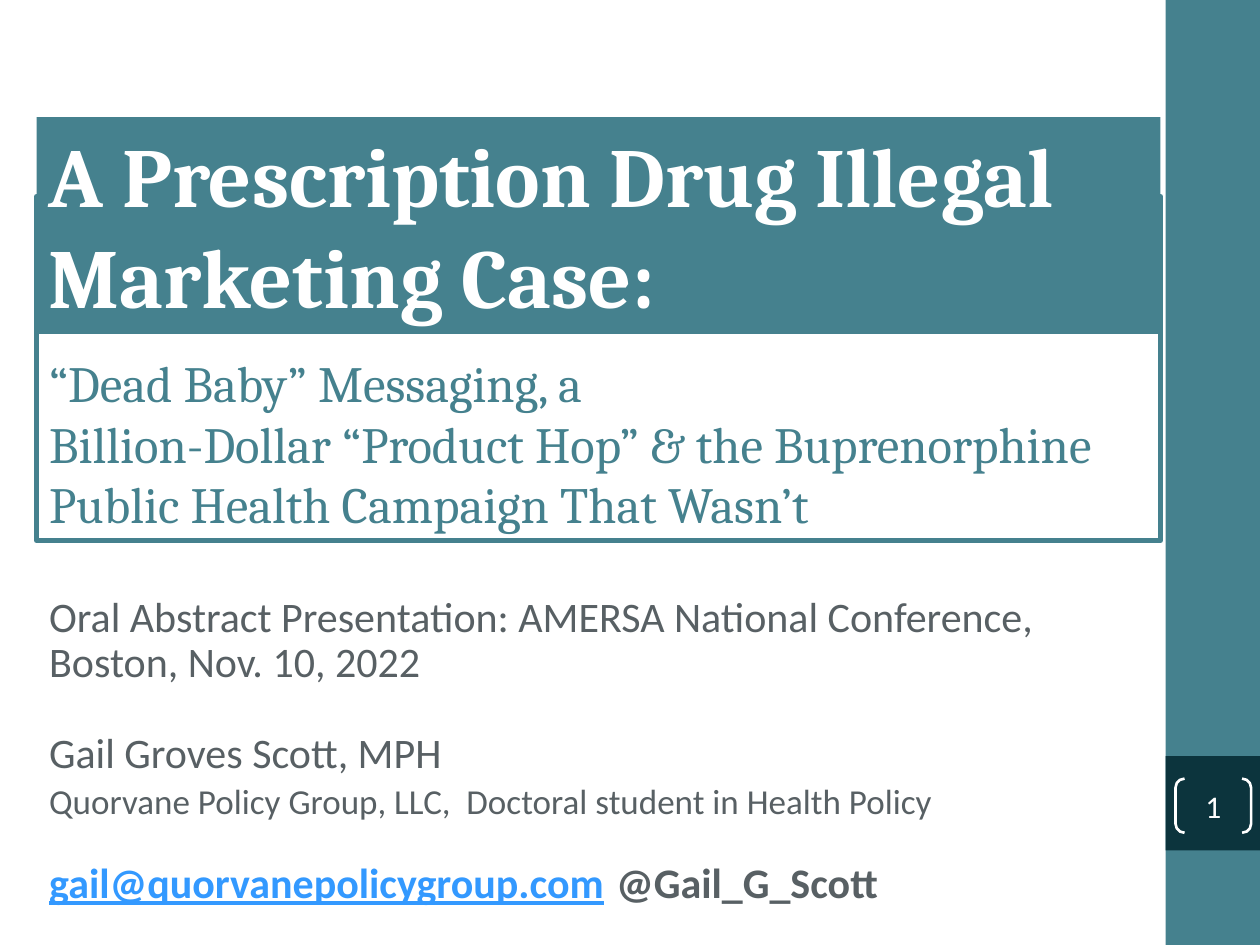
from dataclasses import dataclass

import pptx
import pptx.dml.color
import pptx.enum.shapes
import pptx.enum.text
import pptx.util
from lxml import etree
from pptx.util import Inches

SHAPE = pptx.enum.shapes.MSO_SHAPE
ALIGN = pptx.enum.text.PP_ALIGN
ANCHOR = pptx.enum.text.MSO_ANCHOR


@dataclass(frozen=True)
class Theme:
    teal: str = "45818E"
    dark_teal: str = "0C343D"
    white: str = "FFFFFF"
    gray: str = "586064"
    link: str = "3399FF"
    heading_font: str = "Cambria"
    body_font: str = "Calibri"
    banner_size: int = 48
    title_size: int = 29
    body_size: int = 24
    detail_size: int = 20
    number_size: int = 18


THEME = Theme()


def rgb(value):
    return pptx.dml.color.RGBColor.from_string(value)


def style(font, name, size, color, bold=False):
    font.name = name
    font.size = pptx.util.Pt(size)
    font.color.rgb = rgb(color)
    font.bold = bold


def place(shape, box):
    shape.left, shape.top, shape.width, shape.height = box


def outline(shape, color, width):
    shape.line.color.rgb = rgb(color)
    shape.line.width = pptx.util.Pt(width)


def add_block(page, box, fill=None, kind=SHAPE.RECTANGLE):
    block = page.shapes.add_shape(kind, *box)
    block.shadow.inherit = False
    block.line.fill.background()
    if fill:
        block.fill.solid()
        block.fill.fore_color.rgb = rgb(fill)
    else:
        block.fill.background()
    return block


def prepare(frame, anchor):
    frame.word_wrap = True
    frame.auto_size = pptx.enum.text.MSO_AUTO_SIZE.NONE
    frame.vertical_anchor = anchor


def add_title(page, box):
    title = page.shapes.title
    place(title, box)
    outline(title, THEME.teal, 3)
    prepare(title.text_frame, ANCHOR.BOTTOM)
    title.text_frame.text = (
        "“Dead Baby” Messaging, a \v"
        "Billion-Dollar “Product Hop” & the Buprenorphine \v"
        "Public Health Campaign That Wasn’t"
    )
    para = title.text_frame.paragraphs[0]
    para.alignment = ALIGN.LEFT
    style(para.font, THEME.heading_font, THEME.title_size, THEME.teal)


def add_tab_stop(para, position):
    properties = para._p.get_or_add_pPr()
    tabs = etree.SubElement(properties, pptx.oxml.ns.qn("a:tabLst"))
    etree.SubElement(tabs, pptx.oxml.ns.qn("a:tab"), pos=str(position), algn="l")


def add_details(page, box):
    details = page.placeholders[1]
    place(details, box)
    frame = details.text_frame
    prepare(frame, ANCHOR.TOP)
    lines = [
        ("Oral Abstract Presentation: AMERSA National Conference,", THEME.body_size, 0),
        ("Boston, Nov. 10, 2022", THEME.body_size, 0),
        ("Gail Groves Scott, MPH", THEME.body_size, 26),
        ("Quorvane Policy Group, LLC,  Doctoral student in Health Policy", THEME.detail_size, 4),
        ("", THEME.body_size, 23),
    ]
    for index, (text, size, gap) in enumerate(lines):
        para = frame.add_paragraph() if index else frame.paragraphs[0]
        para.text = text
        para.alignment = ALIGN.LEFT
        para.line_spacing = 0.9
        para.space_before = pptx.util.Pt(gap)
        style(para.font, THEME.body_font, size, THEME.gray)

    contact = frame.paragraphs[-1]
    contact.font.bold = True
    add_tab_stop(contact, Inches(5.85))
    email = contact.add_run()
    email.text = "gail@quorvanepolicygroup.com"
    email.font.color.rgb = rgb(THEME.link)
    email.font.underline = True
    handle = contact.add_run()
    handle.text = "\t@Gail_G_Scott"


def add_banner(page, box):
    banner = add_block(page, box, THEME.teal)
    prepare(banner.text_frame, ANCHOR.TOP)
    banner.text_frame.text = "A Prescription Drug Illegal Marketing Case:"
    para = banner.text_frame.paragraphs[0]
    para.alignment = ALIGN.LEFT
    style(para.font, THEME.heading_font, THEME.banner_size, THEME.white, bold=True)


def add_sidebar(page, box):
    left, top, width, height = box
    add_block(page, box, THEME.teal)
    badge_top = top + Inches(6)
    add_block(page, (left, badge_top, width, width), THEME.dark_teal)
    number_box = (left + Inches(0.08), badge_top + Inches(0.18), Inches(0.6), Inches(0.43))
    number = add_block(page, number_box, kind=SHAPE.DOUBLE_BRACKET)
    outline(number, THEME.white, 1.5)
    frame = number.text_frame
    prepare(frame, ANCHOR.MIDDLE)
    frame.margin_left = frame.margin_right = frame.margin_top = frame.margin_bottom = 0
    frame.text = "1"
    para = frame.paragraphs[0]
    para.alignment = ALIGN.CENTER
    style(para.font, THEME.body_font, THEME.number_size, THEME.white)


def main():
    deck = pptx.Presentation()
    deck.slide_width, deck.slide_height = Inches(10), Inches(7.5)
    page = deck.slides.add_slide(deck.slide_layouts[0])
    left, width = Inches(0.29), Inches(8.92)
    add_title(page, (left, Inches(1.56), width, Inches(2.73)))
    add_details(page, (left, Inches(4.68), width, Inches(1.89)))
    add_banner(page, (left, Inches(0.93), width, Inches(1.72)))
    add_sidebar(page, (Inches(9.25), Inches(0), Inches(0.75), deck.slide_height))
    deck.save("out.pptx")


if __name__ == "__main__":
    main()
